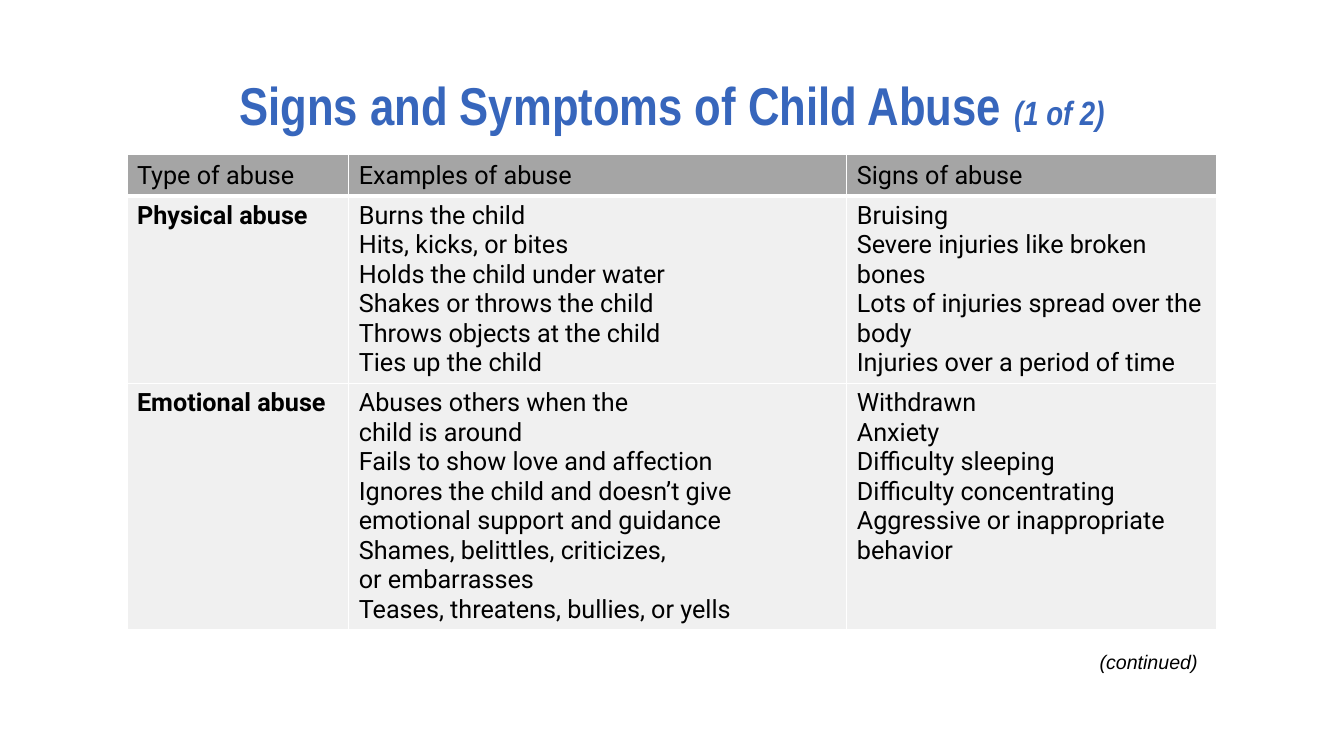
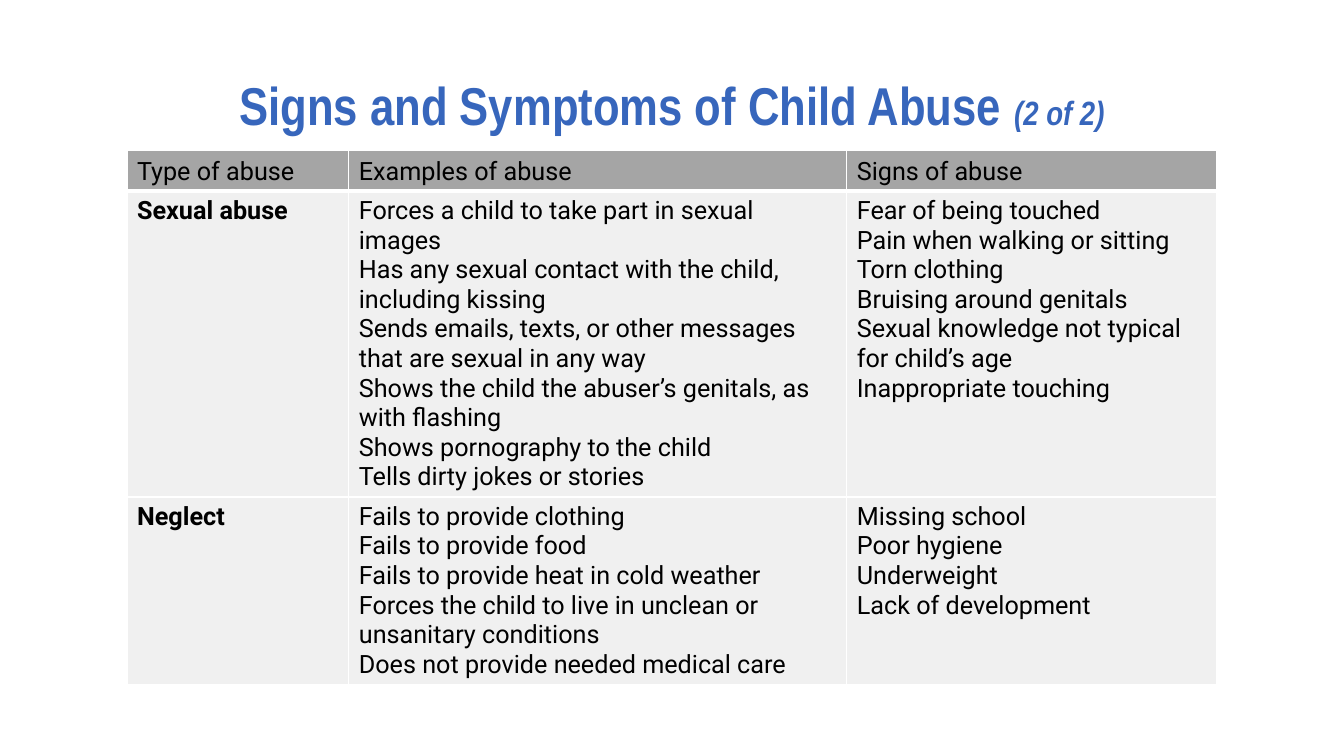
from lxml.etree import SubElement
from pptx import Presentation
from pptx.dml.color import RGBColor
from pptx.enum.text import MSO_ANCHOR, MSO_AUTO_SIZE, PP_ALIGN
from pptx.oxml.ns import qn
from pptx.util import Cm, Pt

TITLE_BLUE = RGBColor(0x37, 0x66, 0xBC)
HEADER_GRAY = RGBColor(0xA5, 0xA5, 0xA5)
BODY_GRAY = RGBColor(0xF0, 0xF0, 0xF0)
BLACK = RGBColor(0, 0, 0)
WHITE = RGBColor(0xFF, 0xFF, 0xFF)

SLIDE_SIZE = (33.87, 19.05)
TITLE_BOX = (0, 1.55, 33.87, 2.36)
CONTINUED_BOX = (27.46, 16.26, 3.23, 0.86)
TABLE_LEFT = 3.2
COLUMN_WIDTHS = (5.59, 12.55, 9.33)
HEADER_HEIGHT = 1.04

TITLE_FONT = {"name": "Arial Narrow", "size": Pt(38), "bold": True, "italic": False}
PART_FONT = TITLE_FONT | {"size": Pt(24), "italic": True}
CELL_FONT = {"name": "Roboto", "size": Pt(18), "bold": False}
TYPE_FONT = CELL_FONT | {"bold": True}
CONTINUED_FONT = {"name": "Arial", "size": Pt(14), "italic": True}
TITLE_FRAME = {
    "margin_left": 0, "margin_top": 0, "margin_right": 0, "margin_bottom": 0,
    "vertical_anchor": MSO_ANCHOR.MIDDLE, "word_wrap": True,
    "auto_size": MSO_AUTO_SIZE.NONE,
}
TITLE_PARAGRAPH = {"alignment": PP_ALIGN.CENTER, "line_spacing": 0.9}
CONTINUED_FRAME = {"word_wrap": True, "auto_size": MSO_AUTO_SIZE.SHAPE_TO_FIT_TEXT}

TITLE = "Signs and Symptoms of Child Abuse "
HEADINGS = ("Type of abuse", "Examples of abuse", "Signs of abuse")

ABUSE_SLIDES = [
    {
        "part": "(1 of 2)",
        "table_top": 3.89,
        "row_heights": (4.7, 6.2),
        "continued": True,
        "abuse_types": [
            (
                ["Physical abuse"],
                ["Burns the child", "Hits, kicks, or bites",
                 "Holds the child under water", "Shakes or throws the child",
                 "Throws objects at the child", "Ties up the child"],
                ["Bruising", "Severe injuries like broken bones",
                 "Lots of injuries spread over the body",
                 "Injuries over a period of time"],
            ),
            (
                ["Emotional abuse"],
                ["Abuses others when the", "child is around",
                 "Fails to show love and affection",
                 "Ignores the child and doesn’t give emotional support and guidance",
                 "Shames, belittles, criticizes,", "or embarrasses",
                 "Teases, threatens, bullies, or yells"],
                ["Withdrawn", "Anxiety", "Difficulty sleeping",
                 "Difficulty concentrating", "Aggressive or inappropriate",
                 "behavior"],
            ),
        ],
    },
    {
        "part": "(2 of 2)",
        "table_top": 3.78,
        "row_heights": (7.7, 4.7),
        "continued": False,
        "abuse_types": [
            (
                ["Sexual abuse"],
                ["Forces a child to take part in sexual images",
                 "Has any sexual contact with the child, including kissing",
                 "Sends emails, texts, or other messages that are sexual in any way",
                 "Shows the child the abuser’s genitals, as with flashing",
                 "Shows pornography to the child", "Tells dirty jokes or stories"],
                ["Fear of being touched", "Pain when walking or sitting",
                 "Torn clothing", "Bruising around genitals",
                 "Sexual knowledge not typical for child’s age",
                 "Inappropriate touching"],
            ),
            (
                ["Neglect"],
                ["Fails to provide clothing", "Fails to provide food",
                 "Fails to provide heat in cold weather",
                 "Forces the child to live in unclean or unsanitary conditions",
                 "Does not provide needed medical care"],
                ["Missing school", "Poor hygiene", "Underweight",
                 "Lack of development"],
            ),
        ],
    },
]


def apply_format(target, values):
    for attribute, value in values.items():
        setattr(target, attribute, value)


def add_run(paragraph, text, font_values, color):
    run = paragraph.add_run()
    run.text = text
    apply_format(run.font, font_values)
    run.font.color.rgb = color


def add_title(slide, box, part):
    title = slide.shapes.title
    apply_format(title, dict(zip(("left", "top", "width", "height"), map(Cm, box))))
    apply_format(title.text_frame, TITLE_FRAME)
    paragraph = title.text_frame.paragraphs[0]
    apply_format(paragraph, TITLE_PARAGRAPH)
    add_run(paragraph, TITLE, TITLE_FONT, TITLE_BLUE)
    add_run(paragraph, part, PART_FONT, TITLE_BLUE)


def set_borders(cell, bottom_width):
    properties = cell._tc.get_or_add_tcPr()
    widths = {"a:lnL": 1, "a:lnR": 1, "a:lnT": 1, "a:lnB": bottom_width}
    for side, width in widths.items():
        border = SubElement(properties, qn(side), w=str(Pt(width)))
        border_fill = SubElement(border, qn("a:solidFill"))
        SubElement(border_fill, qn("a:srgbClr"), val=str(WHITE))


def fill_cell(cell, lines, font_values, is_header):
    set_borders(cell, 3 if is_header else 1)
    cell.fill.solid()
    cell.fill.fore_color.rgb = HEADER_GRAY if is_header else BODY_GRAY
    cell.vertical_anchor = MSO_ANCHOR.BOTTOM if is_header else MSO_ANCHOR.TOP
    frame = cell.text_frame
    for index, line in enumerate(lines):
        paragraph = frame.add_paragraph() if index else frame.paragraphs[0]
        add_run(paragraph, line, font_values, BLACK)


def add_abuse_table(slide, left, top, row_heights, abuse_types):
    rows = [[[heading] for heading in HEADINGS], *abuse_types]
    heights = (HEADER_HEIGHT, *row_heights)
    table = slide.shapes.add_table(
        len(rows), len(HEADINGS), Cm(left), Cm(top),
        Cm(sum(COLUMN_WIDTHS)), Cm(sum(heights)),
    ).table
    table.horz_banding = False
    for column, width in zip(table.columns, COLUMN_WIDTHS):
        column.width = Cm(width)
    for row_index, (row, height) in enumerate(zip(rows, heights)):
        table.rows[row_index].height = Cm(height)
        for column_index, lines in enumerate(row):
            is_type = row_index > 0 and column_index == 0
            fill_cell(table.cell(row_index, column_index), lines,
                      TYPE_FONT if is_type else CELL_FONT, row_index == 0)


def add_continued(slide, box):
    frame = slide.shapes.add_textbox(*map(Cm, box)).text_frame
    apply_format(frame, CONTINUED_FRAME)
    add_run(frame.paragraphs[0], "(continued)", CONTINUED_FONT, BLACK)


def add_abuse_slide(presentation, content):
    slide = presentation.slides.add_slide(presentation.slide_layouts.get_by_name("Title Only"))
    add_title(slide, TITLE_BOX, content["part"])
    add_abuse_table(slide, TABLE_LEFT, content["table_top"],
                    content["row_heights"], content["abuse_types"])
    if content["continued"]:
        add_continued(slide, CONTINUED_BOX)


def main():
    presentation = Presentation()
    presentation.slide_width, presentation.slide_height = map(Cm, SLIDE_SIZE)
    for content in ABUSE_SLIDES:
        add_abuse_slide(presentation, content)
    presentation.save("out.pptx")


if __name__ == "__main__":
    main()
